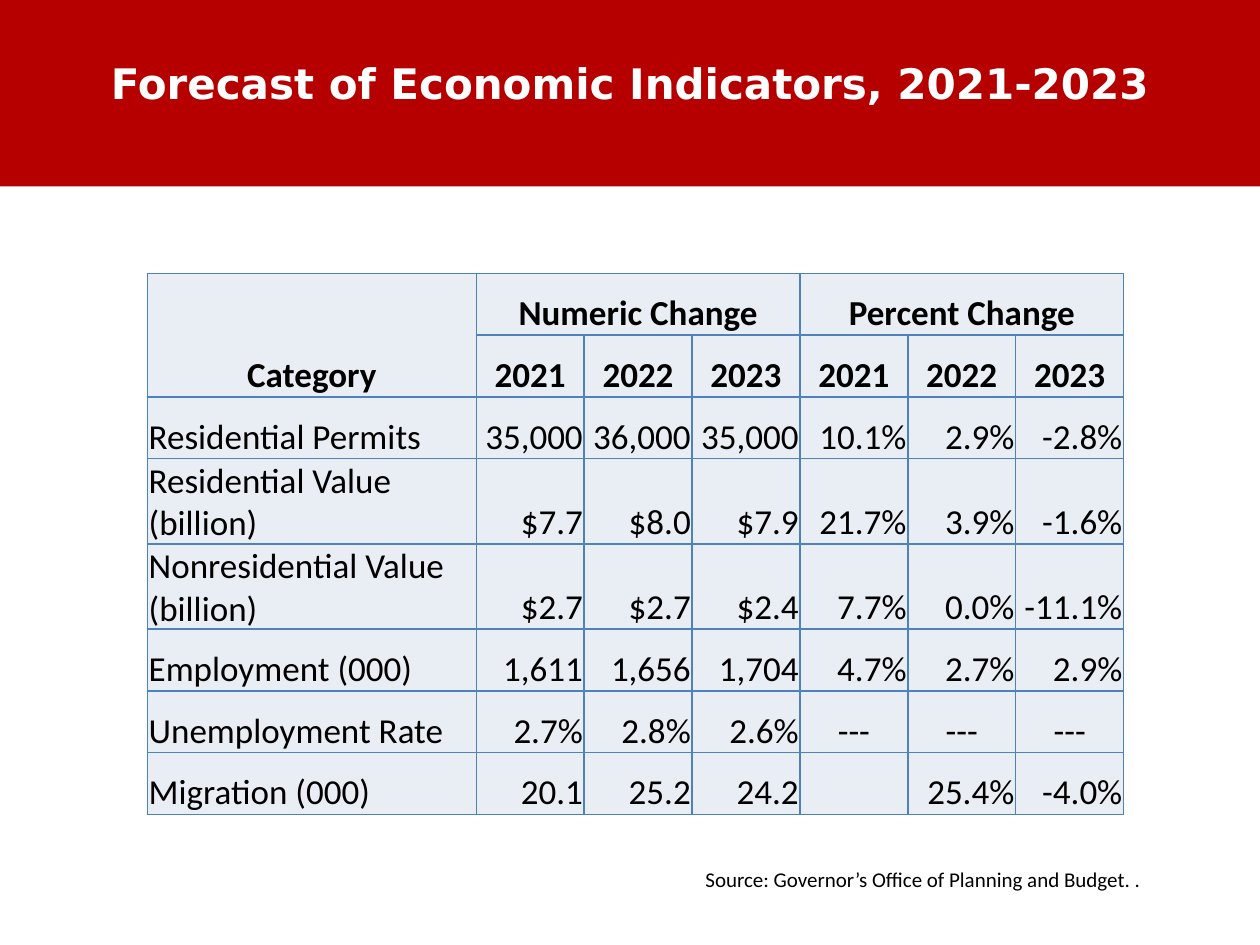
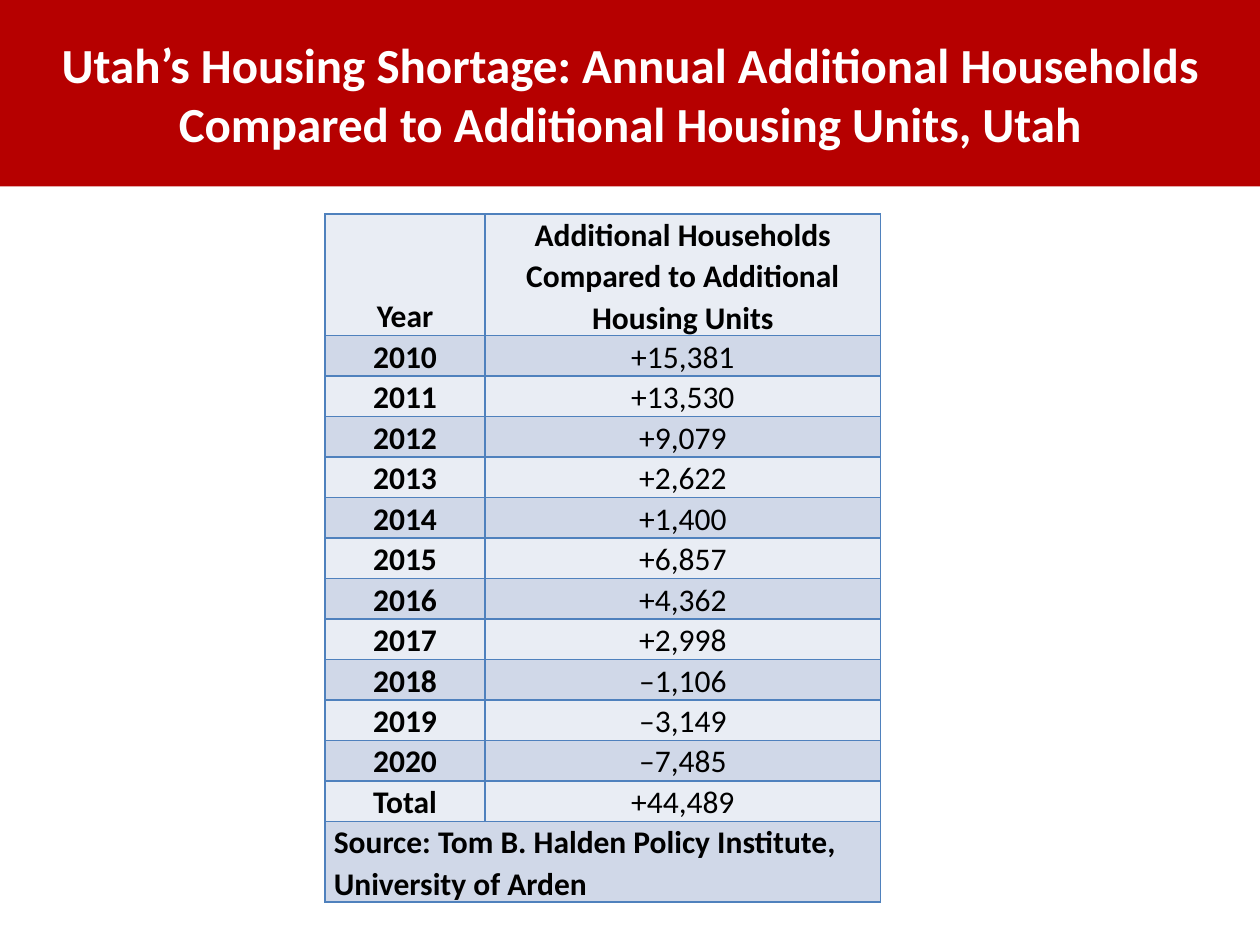
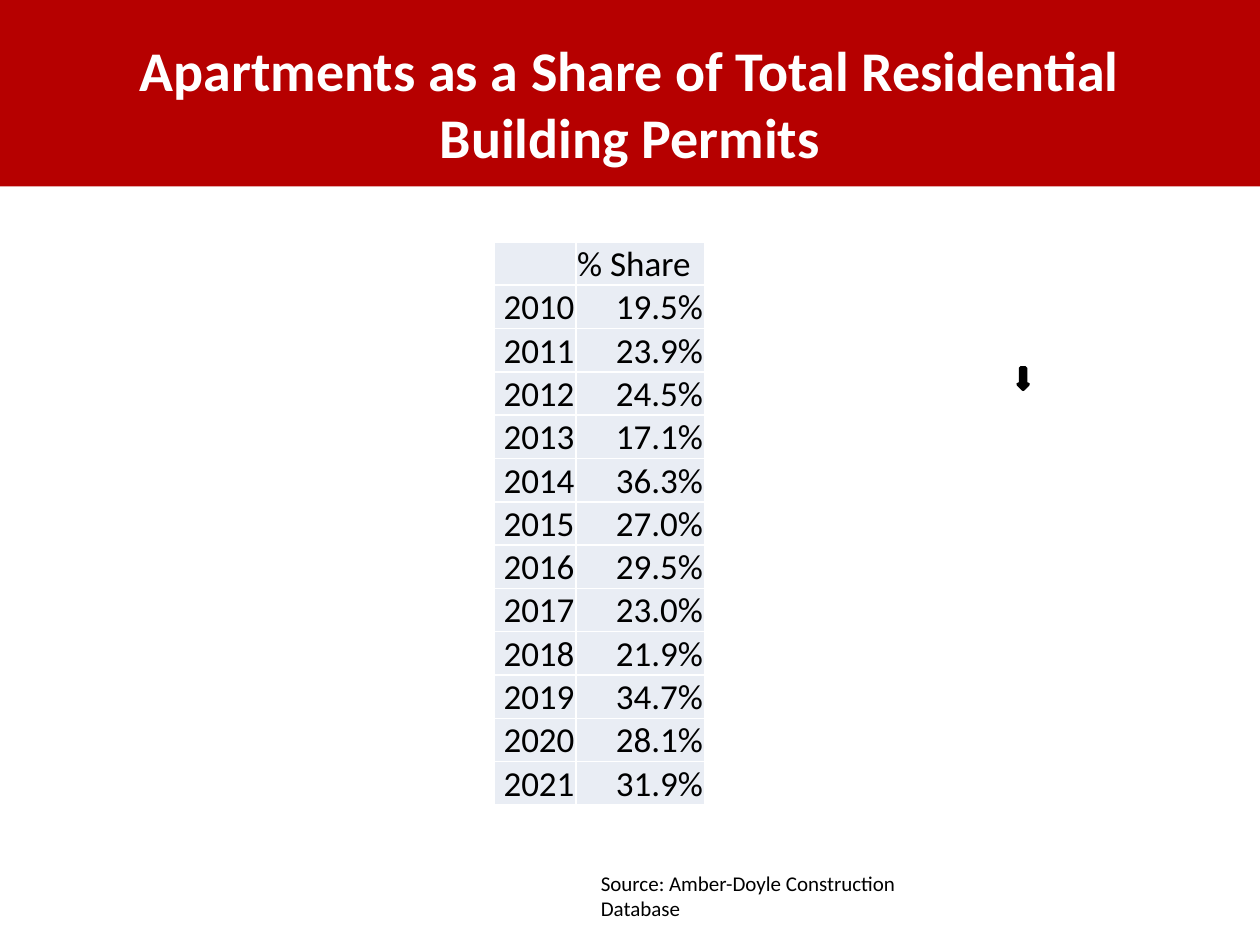
from dataclasses import dataclass

from lxml import etree
from pptx import Presentation
from pptx.dml.color import RGBColor
from pptx.enum.shapes import MSO_SHAPE
from pptx.enum.text import MSO_ANCHOR, MSO_AUTO_SIZE, PP_ALIGN
from pptx.oxml.ns import qn
from pptx.util import Inches, Pt

LEFT, CENTER, RIGHT = PP_ALIGN.LEFT, PP_ALIGN.CENTER, PP_ALIGN.RIGHT
MIDDLE, BOTTOM = MSO_ANCHOR.MIDDLE, MSO_ANCHOR.BOTTOM
RECT, DOWN_ARROW = MSO_SHAPE.RECTANGLE, MSO_SHAPE.DOWN_ARROW
FIT_SHAPE = MSO_AUTO_SIZE.SHAPE_TO_FIT_TEXT


@dataclass(frozen=True)
class Theme:
    band: str = "B60000"
    white: str = "FFFFFF"
    ink: str = "000000"
    grid: str = "4F81BD"
    pale: str = "E9EDF4"
    stripe: str = "D0D8E8"
    font: str = "Calibri"
    wide_font: str = "DejaVu Sans"
    source_size: int = 12
    list_size: int = 18
    table_size: int = 20
    wide_title_size: int = 24
    long_title_size: int = 28
    title_size: int = 32


THEME = Theme()
TIGHT = (0.01, 0.01, 0.01, 0)
PADDED = (0.07, 0, 0.07, 0)


def put_text(tf, text, size, color=THEME.ink, bold=False, align=LEFT,
             font=THEME.font, spacing=None):
    p = tf.paragraphs[0]
    p.alignment = align
    if spacing:
        p.line_spacing = spacing
    r = p.add_run()
    r.text = text
    r.font.name = font
    r.font.size = Pt(size)
    r.font.bold = bold
    r.font.color.rgb = RGBColor.from_string(color)


def set_borders(cell, color):
    """Draw a 1 pt line on all four sides of a table cell."""
    tc_pr = cell._tc.get_or_add_tcPr()
    for i, side in enumerate(("lnL", "lnR", "lnT", "lnB")):
        ln = etree.Element(qn(f"a:{side}"), w=str(Pt(1)))
        fill = etree.SubElement(ln, qn("a:solidFill"))
        etree.SubElement(fill, qn("a:srgbClr"), val=color)
        tc_pr.insert(i, ln)


class Deck:
    def __init__(self, theme):
        self.theme = theme
        self.prs = Presentation()
        self.prs.slide_width, self.prs.slide_height = Inches(10), Inches(7.5)
        self.slide = None

    def new_slide(self):
        """Start a slide and return the red band across its top."""
        self.slide = self.prs.slides.add_slide(self.prs.slide_layouts[6])
        return self.shape(RECT, 0, 0, 10, 1.48, self.theme.band)

    def shape(self, kind, left, top, width, height, fill, line_width=0):
        sp = self.slide.shapes.add_shape(
            kind, Inches(left), Inches(top), Inches(width), Inches(height))
        sp.shadow.inherit = False
        sp.fill.solid()
        sp.fill.fore_color.rgb = RGBColor.from_string(fill)
        if line_width:
            sp.line.color.rgb = RGBColor.from_string(fill)
            sp.line.width = Pt(line_width)
        else:
            sp.line.fill.background()
        return sp

    def text(self, text, left, top, width, height, wrap=True, **style):
        sp = self.slide.shapes.add_textbox(
            Inches(left), Inches(top), Inches(width), Inches(height))
        sp.text_frame.word_wrap = wrap
        put_text(sp.text_frame, text, **style)
        return sp

    def title(self, text, top, size, font=THEME.font):
        self.text(text, 0.5, top, 9, 1.25, size=size, font=font,
                  color=self.theme.white, bold=True, align=CENTER)

    def source(self, text, left, top, width):
        sp = self.text(text, left, top, width, 0.3, wrap=False,
                       size=self.theme.source_size)
        sp.text_frame.auto_size = FIT_SHAPE

    def table(self, rows, left, top, widths, heights, style, border,
              insets=TIGHT, merges=(), spacing=None):
        """Fill a table; style(row, col, text) gives a cell's text format and fill."""
        frame = self.slide.shapes.add_table(
            len(rows), len(widths), Inches(left), Inches(top),
            Inches(sum(widths)), Inches(sum(heights)))
        table = frame.table
        table.first_row = table.horz_banding = False
        for column, width in zip(table.columns, widths):
            column.width = Inches(width)
        for row, height in zip(table.rows, heights):
            row.height = Inches(height)
        for i, row in enumerate(rows):
            for j, text in enumerate(row):
                cell = table.cell(i, j)
                form = style(i, j, text)
                cell.fill.solid()
                cell.fill.fore_color.rgb = RGBColor.from_string(form.pop("fill"))
                set_borders(cell, border)
                cell.vertical_anchor = BOTTOM
                (cell.margin_left, cell.margin_top, cell.margin_right,
                 cell.margin_bottom) = map(Inches, insets)
                if text:
                    put_text(cell.text_frame, text, spacing=spacing, **form)
        for first, last in merges:
            table.cell(*first).merge(table.cell(*last))


def forecast_slide(deck):
    t = deck.theme
    deck.new_slide()
    deck.title("Forecast of Economic Indicators, 2021-2023", 0.41,
               t.wide_title_size, t.wide_font)
    deck.source("Source: Governor’s Office of Planning and Budget. .", 5.5, 6.83, 3.69)
    years = ["2021", "2022", "2023"]
    rows = [
        ["Category", "Numeric Change", "", "", "Percent Change", "", ""],
        ["", *years, *years],
        ["Residential Permits", "35,000", "36,000", "35,000", "10.1%", "2.9%", "-2.8%"],
        ["Residential Value (billion)", "$7.7", "$8.0", "$7.9", "21.7%", "3.9%", "-1.6%"],
        ["Nonresidential Value (billion)", "$2.7", "$2.7", "$2.4", "7.7%", "0.0%", "-11.1%"],
        ["Employment (000)", "1,611", "1,656", "1,704", "4.7%", "2.7%", "2.9%"],
        ["Unemployment Rate", "2.7%", "2.8%", "2.6%", "---", "---", "---"],
        ["Migration (000)", "20.1", "25.2", "24.2", "", "25.4%", "-4.0%"],
    ]

    def style(i, j, text):
        header = i < 2
        if header or text == "---":
            align = CENTER
        else:
            align = RIGHT if j else LEFT
        return dict(size=t.table_size, bold=header, align=align, fill=t.pale)

    category_width = 2.61
    year_width = (7.75 - category_width) / 6
    deck.table(rows, 1.17, 2.17, [category_width] + [year_width] * 6,
               [0.49] * len(rows), style, t.grid,
               merges=[((0, 0), (1, 0)), ((0, 1), (0, 3)), ((0, 4), (0, 6))])


def shortage_slide(deck):
    t = deck.theme
    band = deck.new_slide()
    band.text_frame.word_wrap = True
    band.text_frame.vertical_anchor = MIDDLE
    put_text(band.text_frame,
             "Utah’s Housing Shortage: Annual Additional Households "
             "Compared to Additional Housing Units, Utah",
             t.long_title_size, t.white, bold=True, align=CENTER)
    gaps = ["+15,381", "+13,530", "+9,079", "+2,622", "+1,400", "+6,857",
            "+4,362", "+2,998", "–1,106", "–3,149", "–7,485"]
    rows = [
        ["Year", "Additional Households Compared to Additional Housing Units"],
        *([str(year), gap] for year, gap in enumerate(gaps, 2010)),
        ["Total", "+44,489"],
        ["Source: Tom B. Halden Policy Institute, University of Arden", ""],
    ]
    last = len(rows) - 1

    def style(i, j, text):
        return dict(size=t.list_size, bold=i == 0 or j == 0,
                    align=LEFT if i == last else CENTER,
                    fill=t.stripe if i % 2 else t.pale)

    deck.table(rows, 2.58, 1.7, [1.27, 3.14], [0.89] + [0.29] * (last - 1) + [0.47],
               style, t.grid, PADDED, merges=[((last, 0), (last, 1))], spacing=1.07)


def apartments_slide(deck):
    t = deck.theme
    deck.new_slide()
    deck.title("Apartments as a Share of Total Residential Building Permits",
               0.23, t.title_size)
    deck.source("Source: Amber-Doyle Construction Database", 4.67, 6.86, 3.13)
    deck.shape(DOWN_ARROW, 8.08, 2.92, 0.08, 0.17, t.ink, line_width=2)
    shares = ["19.5%", "23.9%", "24.5%", "17.1%", "36.3%", "27.0%",
              "29.5%", "23.0%", "21.9%", "34.7%", "28.1%", "31.9%"]
    rows = [["", "% Share"],
            *([str(year), share] for year, share in enumerate(shares, 2010))]

    def style(i, j, text):
        return dict(size=t.table_size, align=RIGHT if i else LEFT, fill=t.pale)

    deck.table(rows, 3.92, 1.92, [0.65, 1.02], [0.33] * len(rows), style, t.white)


def main():
    deck = Deck(THEME)
    forecast_slide(deck)
    shortage_slide(deck)
    apartments_slide(deck)
    deck.prs.save("out.pptx")


if __name__ == "__main__":
    main()
